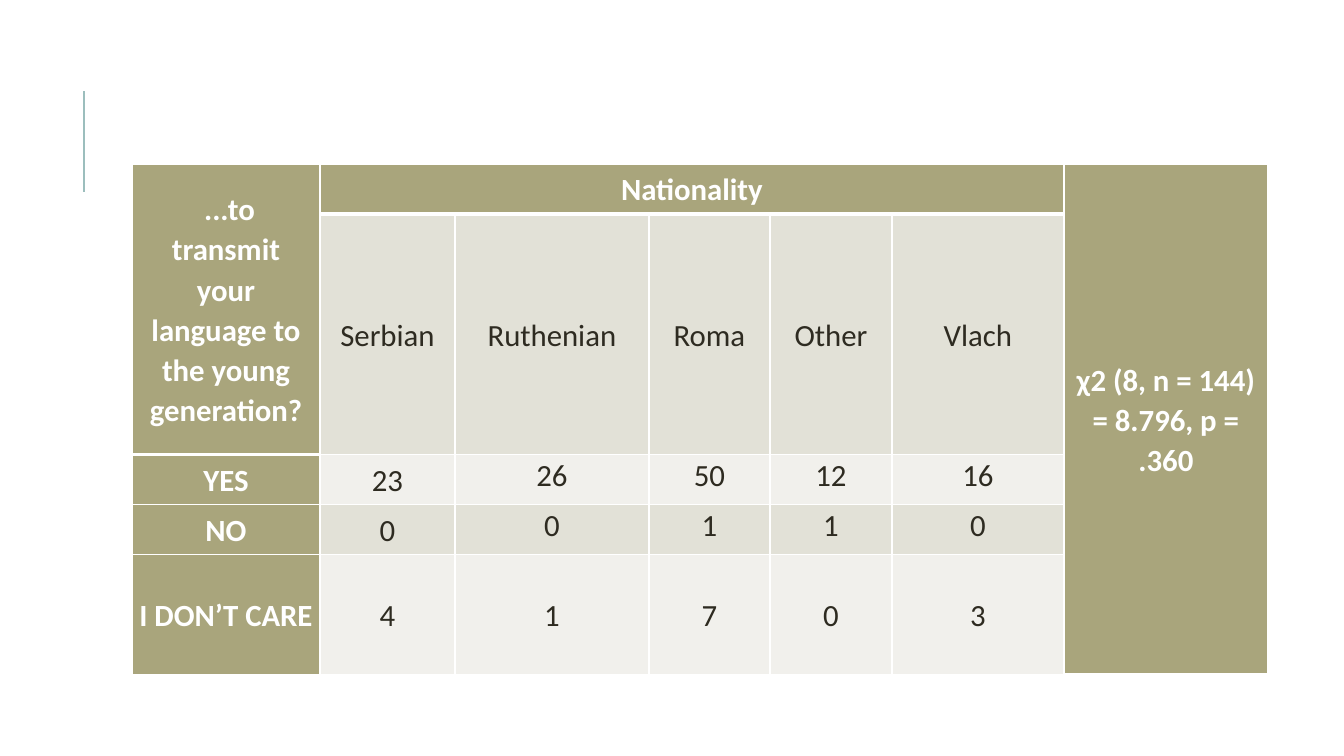
from lxml import etree
from pptx import Presentation
from pptx import util as u
from pptx.dml.color import RGBColor
from pptx.enum import shapes, text
from pptx.oxml.ns import qn

EMU_PER_PX = 914400 / 100.8
OLIVE, WHITE, INK, RULE = "A9A57C", "FFFFFF", "2E2B21", "9CBEBD"
BANDS = ("F1F0EC", "E2E1D7")
COLUMN_WIDTHS = (188, 135, 194, 121, 122, 172, 204)
ROW_HEIGHTS = (50, 181, 50, 50, 96)
QUESTION = " ...to transmit your language to the young generation?"
CHI_SQUARE = "χ2 (8, n = 144) = 8.796, p = .360"
NATIONALITIES = ("Serbian", "Ruthenian", "Roma", "Other", "Vlach")
ANSWERS = (
    ("YES", 23, 26, 50, 12, 16),
    ("NO", 0, 0, 1, 1, 0),
    ("I DON’T CARE", 4, 1, 7, 0, 3),
)


def px(length):
    """Turn a length in px into EMU."""
    return u.Emu(round(length * EMU_PER_PX))


def colour(hex_string):
    """Turn a hex string into a colour."""
    return RGBColor.from_string(hex_string)


def add_borders(cell):
    """Draw white borders round a header cell, with a thick lower one."""
    properties = cell._tc.get_or_add_tcPr()
    for side, points in (("L", 1), ("R", 1), ("T", 1), ("B", 3)):
        border = etree.SubElement(properties, qn(f"a:ln{side}"), w=str(u.Pt(points)))
        fill = etree.SubElement(border, qn("a:solidFill"))
        etree.SubElement(fill, qn("a:srgbClr"), val=WHITE)


def fill_cell(cell, wording, background, ink=INK, bold=False, middle=True, inset=7):
    """Fill one cell with centred wording on its background."""
    cell.fill.solid()
    cell.fill.fore_color.rgb = colour(background)
    cell.margin_left = cell.margin_right = px(inset)
    cell.margin_top = cell.margin_bottom = 0
    cell.vertical_anchor = text.MSO_ANCHOR.MIDDLE if middle else text.MSO_ANCHOR.TOP
    paragraph = cell.text_frame.paragraphs[0]
    paragraph.alignment = text.PP_ALIGN.CENTER
    paragraph.line_spacing = 1.07
    run = paragraph.add_run()
    run.text = str(wording)
    run.font.name, run.font.size, run.font.bold = "Calibri", u.Pt(22), bold
    run.font.color.rgb = colour(ink)


def add_title_rule(slide, left, top, height):
    """Draw the thin upright rule beside the title area."""
    rule = slide.shapes.add_connector(
        shapes.MSO_CONNECTOR.STRAIGHT, px(left), px(top + height), px(left), px(top))
    rule.line.color.rgb = colour(RULE)
    rule.line.width = u.Pt(1.5)
    etree.SubElement(rule._element.spPr, qn("a:effectLst"))


def add_answers_table(slide, left, top):
    """Build the table of answers by nationality."""
    table = slide.shapes.add_table(
        len(ROW_HEIGHTS), len(COLUMN_WIDTHS), px(left), px(top),
        px(sum(COLUMN_WIDTHS)), px(sum(ROW_HEIGHTS))).table
    table.first_col = True
    for column, width in zip(table.columns, COLUMN_WIDTHS):
        column.width = px(width)
    for row, height in zip(table.rows, ROW_HEIGHTS):
        row.height = px(height)

    headers = ((QUESTION, 0, 1, 0, 11), ("Nationality", 1, 0, 5, 7), (CHI_SQUARE, 6, 4, 6, 7))
    for wording, first_column, last_row, last_column, inset in headers:
        header = table.cell(0, first_column)
        header.merge(table.cell(last_row, last_column))
        add_borders(header)
        fill_cell(header, wording, OLIVE, WHITE, bold=True, inset=inset)

    for column, nationality in enumerate(NATIONALITIES, 1):
        fill_cell(table.cell(1, column), nationality, BANDS[1])

    for row, (answer, *counts) in enumerate(ANSWERS, 2):
        fill_cell(table.cell(row, 0), answer, OLIVE, WHITE, bold=True)
        for column, count in enumerate(counts, 1):
            fill_cell(table.cell(row, column), count, BANDS[row % 2],
                      middle=column == 1 or row == 4)


def main():
    """Build the slide and save it."""
    deck = Presentation()
    deck.slide_width, deck.slide_height = px(1344), px(756)
    slide = deck.slides.add_slide(deck.slide_layouts[6])
    add_title_rule(slide, 84, 91, 101)
    add_answers_table(slide, 132, 164)
    deck.save("out.pptx")


if __name__ == "__main__":
    main()
